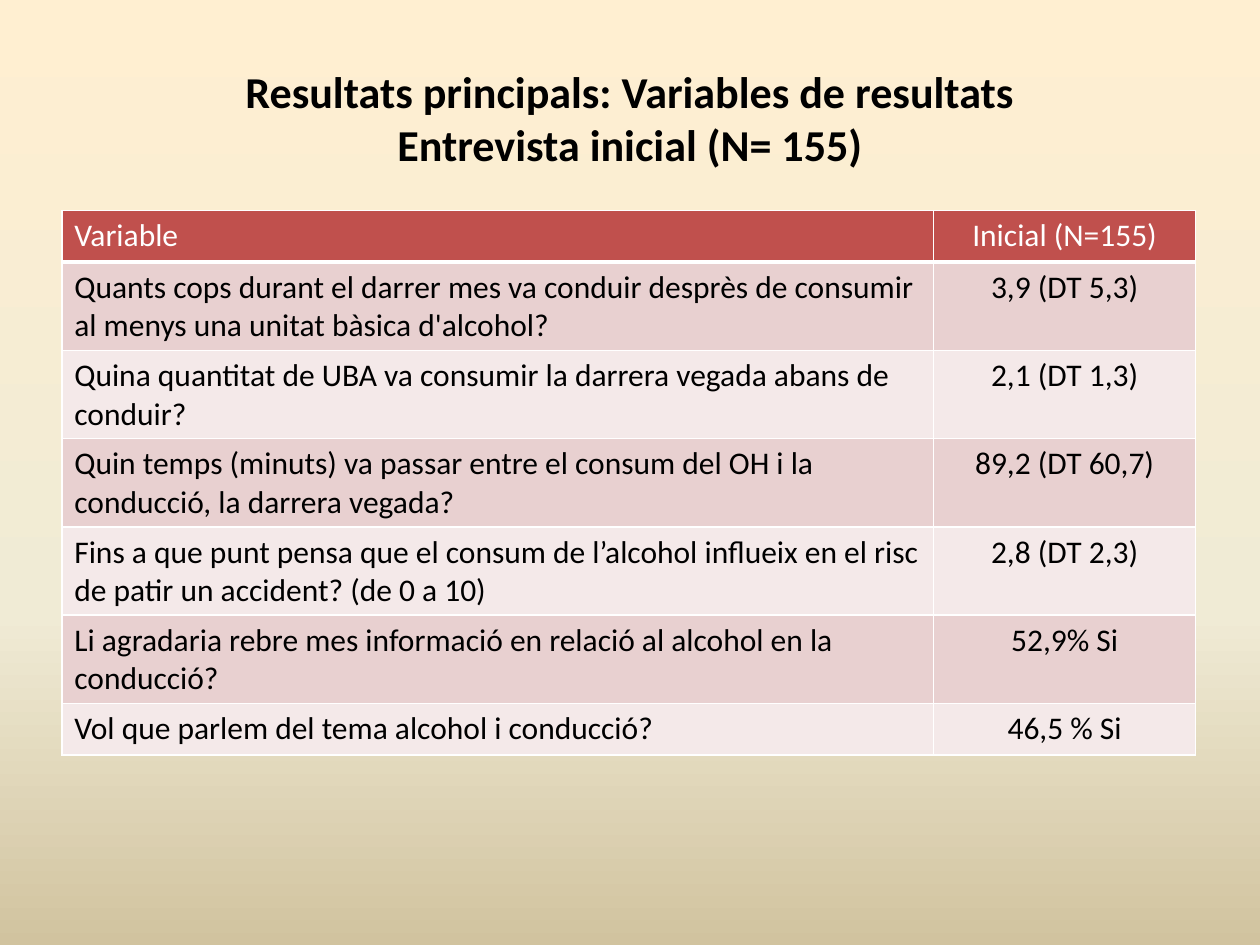
"""Build a slide with a table of the main results of the initial interview."""
from dataclasses import dataclass

from lxml.etree import SubElement
from pptx import Presentation
from pptx.dml.color import RGBColor
from pptx.enum.text import MSO_ANCHOR, PP_ALIGN
from pptx.oxml.ns import qn
from pptx.util import Inches, Pt

COLORS = {
    "sky": "FFEFD1", "cream": "F0EBD5", "sand": "D1C39F",
    "header": "C0504D", "odd": "E8D0D0", "even": "F4E9E9",
    "white": "FFFFFF", "black": "000000",
}
FONT = "Calibri"
COLUMN_WIDTHS = (6.92, 2.08)
LINE_HEIGHTS = {1: 0.41, 2: 0.7}


@dataclass
class ResultRow:
    question: str
    value: str
    lines: int = 2


ROWS = [
    ResultRow("Variable", "Inicial (N=155)", 1),
    ResultRow("Quants cops durant el darrer mes va conduir desprès de consumir "
              "al menys una unitat bàsica d'alcohol?", "3,9 (DT 5,3)"),
    ResultRow("Quina quantitat de UBA va consumir la darrera vegada abans de conduir?",
              "2,1 (DT 1,3)"),
    ResultRow("Quin temps (minuts) va passar entre el consum del OH i la conducció, "
              "la darrera vegada?", "89,2 (DT 60,7)"),
    ResultRow("Fins a que punt pensa que el consum de l’alcohol influeix en el risc "
              "de patir un accident? (de 0 a 10)", "2,8 (DT 2,3)"),
    ResultRow("Li agradaria rebre mes informació en relació al alcohol en la conducció?",
              "52,9% Si"),
    ResultRow("Vol que parlem del tema alcohol i conducció?", "46,5 % Si", 1),
]


def write_text(frame, text: str, *, size: float = 18, color: str = "black",
               bold: bool = False, align=PP_ALIGN.LEFT) -> None:
    """Fill the first paragraph of a text frame with formatted text."""
    para = frame.paragraphs[0]
    para.text = text
    para.alignment = align
    for span in para.runs:
        span.font.name = FONT
        span.font.size = Pt(size)
        span.font.bold = bold
        span.font.color.rgb = RGBColor.from_string(COLORS[color])


def paint_background(page) -> None:
    """Give the page a vertical gradient of three colours."""
    fill = page.background.fill
    fill.gradient()
    fill.gradient_angle = 270
    stops = page.element.find(".//" + qn("a:gsLst"))
    for stop in list(stops):
        stops.remove(stop)
    for percent, name in ((0, "sky"), (65, "cream"), (100, "sand")):
        stop = SubElement(stops, qn("a:gs"), pos=str(percent * 1000))
        SubElement(stop, qn("a:srgbClr"), val=COLORS[name])


def draw_borders(cell, bottom: float) -> None:
    """Draw white lines around a cell, with a chosen bottom width."""
    properties = cell._tc.get_or_add_tcPr()
    for side, width in (("L", 1), ("R", 1), ("T", 1), ("B", bottom)):
        line = SubElement(properties, qn(f"a:ln{side}"), w=str(Pt(width)))
        fill = SubElement(line, qn("a:solidFill"))
        SubElement(fill, qn("a:srgbClr"), val=COLORS["white"])


def draw_title(page, text: str) -> None:
    """Place the centred title above the table."""
    box = page.shapes.add_textbox(Inches(0.5), Inches(0.5), Inches(9), Inches(0.87))
    box.text_frame.word_wrap = True
    box.text_frame.vertical_anchor = MSO_ANCHOR.MIDDLE
    write_text(box.text_frame, text, size=25.2, bold=True, align=PP_ALIGN.CENTER)


def draw_table(page, rows: list[ResultRow]) -> None:
    """Draw the results with a header and alternating row colours."""
    heights = [LINE_HEIGHTS[row.lines] for row in rows]
    table = page.shapes.add_table(
        len(rows), len(COLUMN_WIDTHS), Inches(0.49), Inches(1.67),
        Inches(sum(COLUMN_WIDTHS)), Inches(sum(heights))).table
    for column, width in zip(table.columns, COLUMN_WIDTHS):
        column.width = Inches(width)
    for index, row in enumerate(rows):
        table.rows[index].height = Inches(heights[index])
        is_header = index == 0
        shade = "header" if is_header else "odd" if index % 2 else "even"
        for column, (text, align) in enumerate(
                ((row.question, PP_ALIGN.LEFT), (row.value, PP_ALIGN.CENTER))):
            cell = table.cell(index, column)
            draw_borders(cell, bottom=3 if is_header else 1)
            cell.fill.solid()
            cell.fill.fore_color.rgb = RGBColor.from_string(COLORS[shade])
            write_text(cell.text_frame, text, align=align,
                       color="white" if is_header else "black")


def main() -> None:
    """Build and save the deck."""
    deck = Presentation()
    deck.slide_width, deck.slide_height = Inches(10), Inches(7.5)
    page = deck.slides.add_slide(deck.slide_layouts[6])
    paint_background(page)
    draw_title(page, "Resultats principals: Variables de resultats\n"
                     "Entrevista inicial (N= 155)")
    draw_table(page, ROWS)
    deck.save("out.pptx")


if __name__ == "__main__":
    main()
